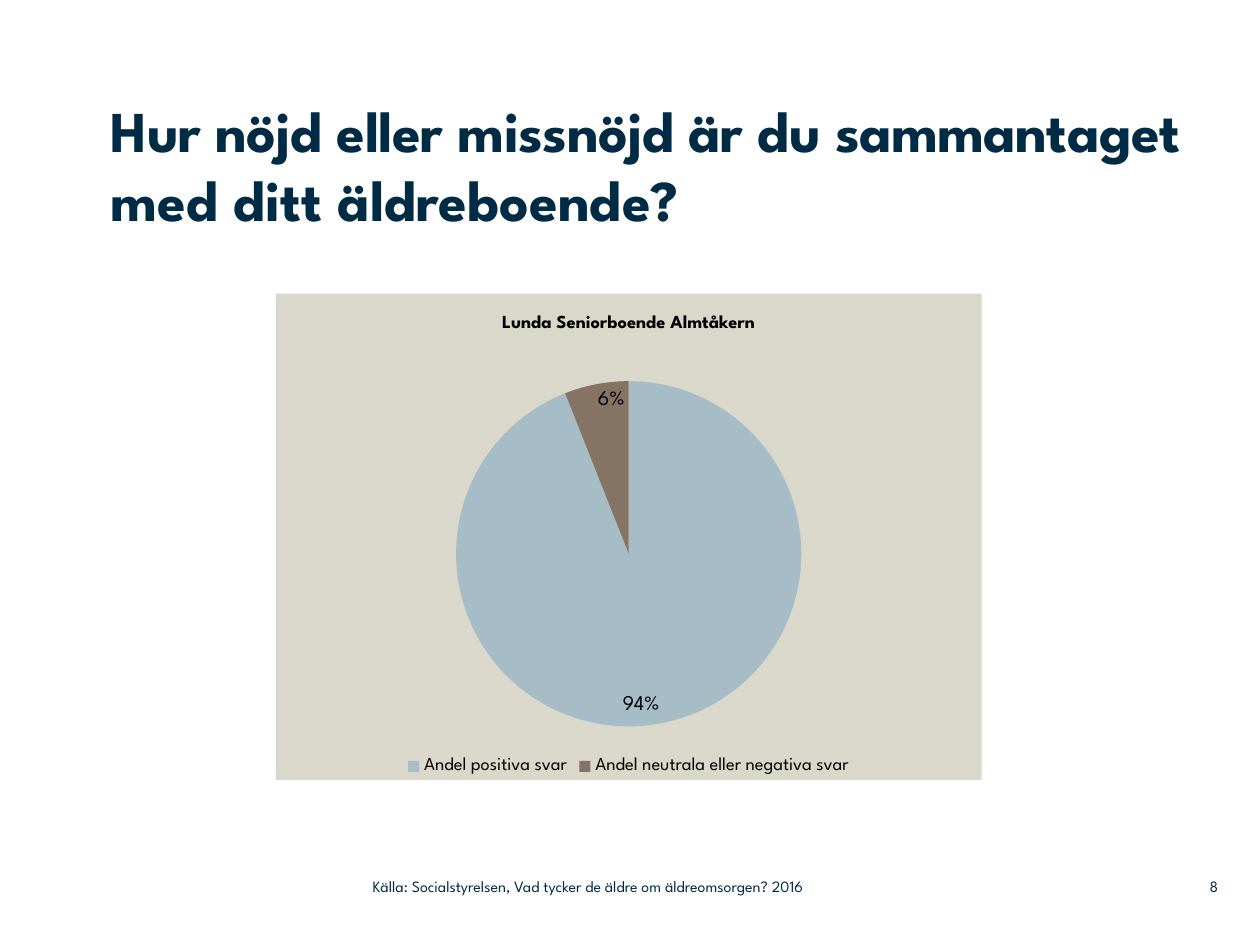
"""Build the slide on overall satisfaction with the care home."""
from lxml.etree import SubElement
from pptx import Presentation
from pptx.chart.data import CategoryChartData
from pptx.dml.color import RGBColor
from pptx.enum.chart import XL_CHART_TYPE, XL_LABEL_POSITION, XL_LEGEND_POSITION
from pptx.enum.text import MSO_ANCHOR, MSO_AUTO_SIZE, PP_ALIGN
from pptx.oxml import parse_xml
from pptx.oxml.ns import nsdecls, qn
from pptx.util import Pt

COLORS = {"navy": "002B45", "black": "000000", "sand": "DAD7CB",
          "positive": "A6BCC6", "negative": "857363"}
FONT = "League Spartan"


class SlideBuilder:
    """Hold the style and the current slide."""

    def __init__(self, page):
        self.page = page

    def color(self, name):
        return RGBColor.from_string(COLORS[name])

    def style(self, font, size, color, bold=False):
        font.name, font.size, font.bold = FONT, Pt(size), bold
        font.color.rgb = self.color(color)

    def frame(self, box, anchor, align):
        frame = box.text_frame
        frame.margin_left = frame.margin_right = 0
        frame.margin_top = frame.margin_bottom = 0
        frame.word_wrap, frame.auto_size = True, MSO_AUTO_SIZE.NONE
        frame.vertical_anchor = anchor
        paragraph = frame.paragraphs[0]
        paragraph.alignment = align
        return paragraph

    def title(self, first, rest, left, top, width, height):
        box = self.page.shapes.title
        box.left, box.top, box.width, box.height = map(Pt, (left, top, width, height))
        paragraph = self.frame(box, MSO_ANCHOR.TOP, PP_ALIGN.LEFT)
        span = paragraph.add_run()
        span.text = first
        span._r.get_or_add_rPr().set("spc", "-30")
        paragraph.add_run().text = rest
        self.style(paragraph.font, 33, "navy", bold=True)

    def text(self, words, left, top, width, height, align=PP_ALIGN.LEFT):
        box = self.page.shapes.add_textbox(*map(Pt, (left, top, width, height)))
        paragraph = self.frame(box, MSO_ANCHOR.MIDDLE, align)
        paragraph.add_run().text = words
        self.style(paragraph.font, 9, "navy")

    def pie(self, title, shares, left, top, width, height):
        data = CategoryChartData()
        data.categories = [label for label, value, color in shares]
        data.add_series("Series 1", [value for label, value, color in shares])
        chart = self.page.shapes.add_chart(
            XL_CHART_TYPE.PIE, *map(Pt, (left, top, width, height)), data).chart
        self.style(chart.font, 18, "black")

        chart.has_title = True
        paragraph = chart.chart_title.text_frame.paragraphs[0]
        paragraph.add_run().text = title
        self.style(paragraph.font, 10.5, "black", bold=True)
        chart.chart_title.include_in_layout = False

        chart.has_legend = True
        chart.legend.position = XL_LEGEND_POSITION.BOTTOM
        chart.legend.include_in_layout = False
        self.style(chart.legend.font, 10.5, "black")

        plot = chart.plots[0]
        plot.vary_by_categories = True
        for index, (label, value, color) in enumerate(shares):
            fill = plot.series[0].points[index].format.fill
            fill.solid()
            fill.fore_color.rgb = self.color(color)
        labels = plot.series[0].data_labels
        labels.show_percentage, labels.show_value = True, False
        labels.number_format, labels.number_format_is_linked = "0%", False
        labels.position = XL_LABEL_POSITION.INSIDE_END
        self.style(labels.font, 12, "black")
        self.place_plot(chart, x=0.25, y=0.18, w=0.5, h=0.71)
        self.chart_fill(chart, "sand")

    def place_plot(self, chart, **area):
        plot_area = chart._chartSpace.chart.plotArea
        for old in plot_area.findall(qn("c:layout")):
            plot_area.remove(old)
        layout = parse_xml(f"<c:layout {nsdecls('c')}/>")
        manual = SubElement(layout, qn("c:manualLayout"))
        settings = {"layoutTarget": "inner", "xMode": "edge", "yMode": "edge", **area}
        for name, value in settings.items():
            SubElement(manual, qn(f"c:{name}")).set("val", str(value))
        plot_area.insert(0, layout)

    def chart_fill(self, chart, color):
        chart._chartSpace.chart.addnext(parse_xml(
            f"<c:spPr {nsdecls('c', 'a')}><a:solidFill>"
            f'<a:srgbClr val="{COLORS[color]}"/></a:solidFill>'
            "<a:ln><a:noFill/></a:ln></c:spPr>"))


def main():
    deck = Presentation()
    deck.slide_width, deck.slide_height = Pt(720), Pt(540)
    builder = SlideBuilder(deck.slides.add_slide(deck.slide_layouts[5]))
    builder.text("8", 662.4, 496, 33.8, 21, PP_ALIGN.RIGHT)
    builder.text("Källa: Socialstyrelsen, Vad tycker de äldre om äldreomsorgen? 2016",
                 213, 496, 319, 21)
    builder.title("Hur nöjd eller missnöjd är du sammantaget ",
                  "med ditt äldreboende?", 63.4, 54, 635.8, 102.2)
    builder.pie("Lunda Seniorboende Almtåkern",
                [("Andel positiva svar", 94, "positive"),
                 ("Andel neutrala eller negativa svar", 6, "negative")],
                157.7, 167.8, 403.2, 277.9)
    deck.save("out.pptx")


if __name__ == "__main__":
    main()
